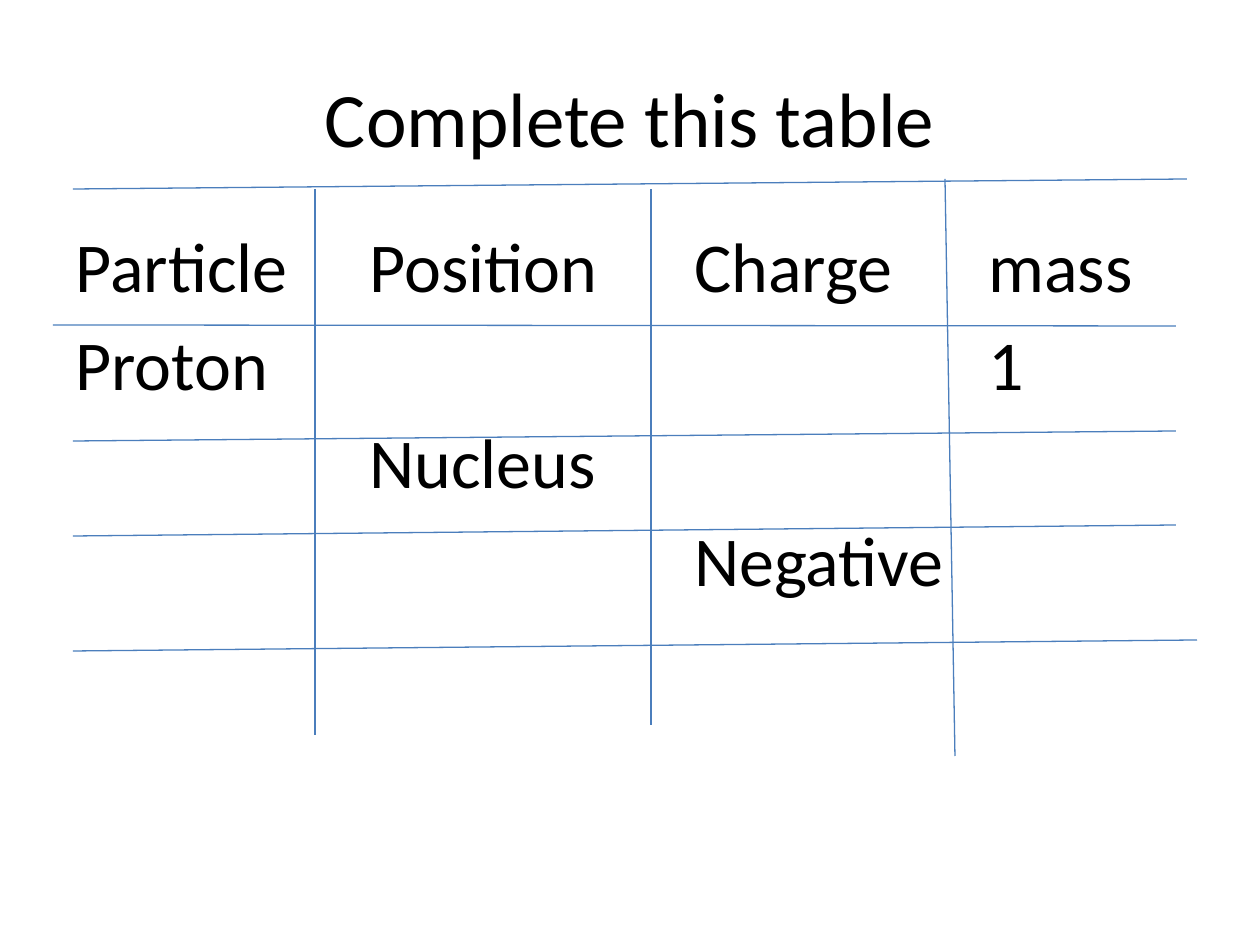
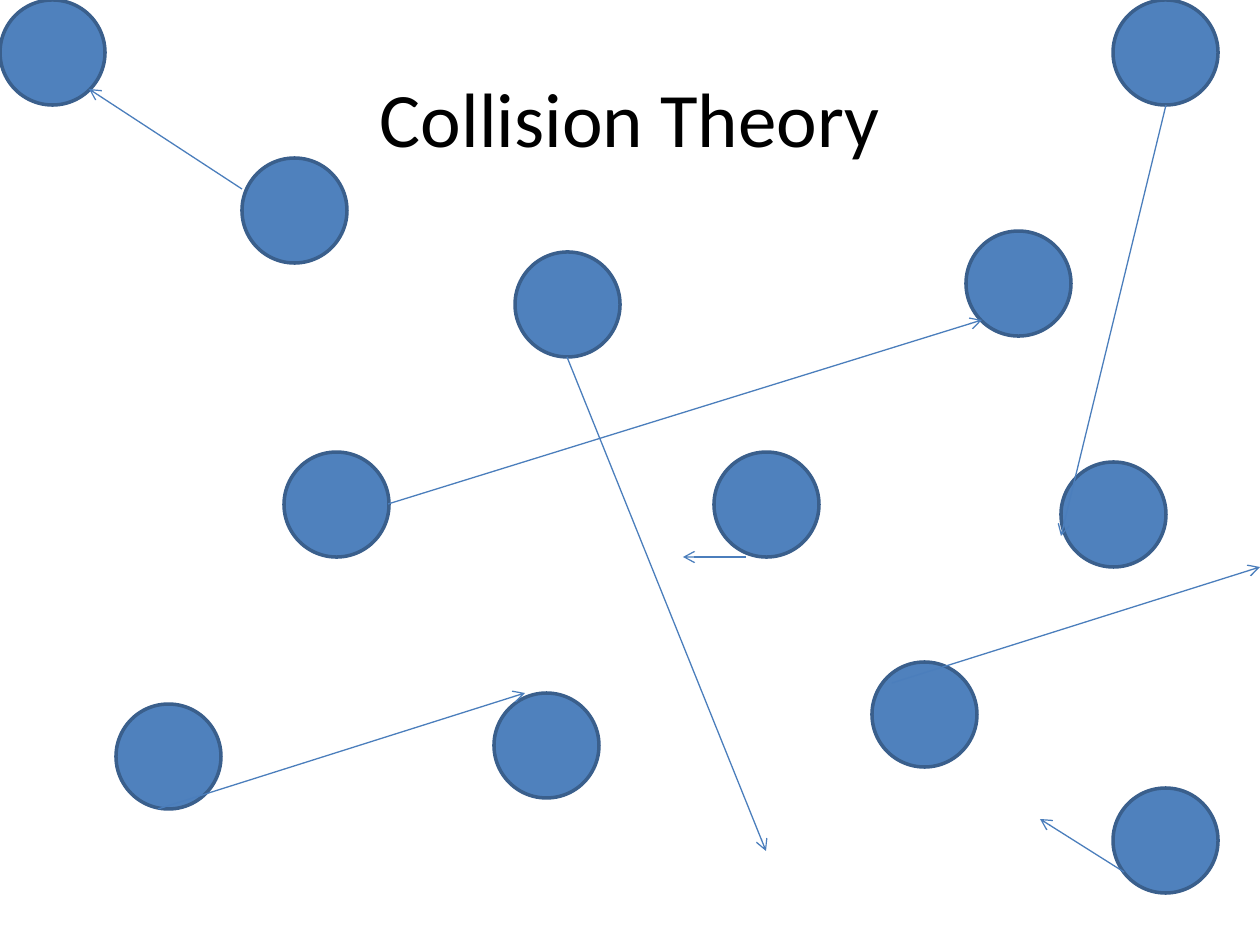
import pptx
import pptx.dml.color
import pptx.enum.shapes
import pptx.enum.text
import pptx.oxml
import pptx.oxml.ns
import pptx.util

PX = 914400 / 126
FONT = "Calibri"
COLOURS = {"text": "000000", "line": "4B7EBC", "particle": "4F81BD", "outline": "3A5F8C"}

SLIDE_BOX = (0, 0, 1260, 945)
TITLE_BOX = (63, 38, 1134, 158)
TABLE_BOX = (63, 220, 1133, 392)

COLUMN_WIDTHS = [294, 325, 294, 189, 31]
ROWS = [
    ["Particle", "Position", "Charge", "mass", ""],
    ["Proton", "", "", "1", ""],
    ["", "Nucleus", "", "", ""],
    ["", "", "Negative", "", ""],
]
TABLE_RULES = [
    (10, -31, 1124, -41),
    (-10, 105, 1113, 106),
    (10, 221, 1113, 211),
    (10, 316, 1113, 305),
    (10, 431, 1134, 420),
    (252, -31, 252, 515),
    (588, -31, 588, 505),
    (882, -41, 892, 536),
]

PARTICLE_SIZE = 105
PARTICLES = [
    (284, 452), (1113, 788), (1061, 462), (1113, 0), (242, 158), (0, 0),
    (714, 452), (494, 693), (116, 704), (515, 252), (872, 662), (966, 231),
]
MOTIONS = [
    (388, 504, 982, 320),
    (242, 189, 89, 89),
    (1166, 105, 1061, 536),
    (746, 557, 683, 557),
    (158, 809, 525, 693),
    (567, 357, 766, 851),
    (892, 683, 1260, 567),
    (1124, 872, 1040, 819),
]


def emu(*lengths):
    return [pptx.util.Emu(round(length * PX)) for length in lengths]


def colour(name):
    return pptx.dml.color.RGBColor.from_string(COLOURS[name])


def add_run(paragraph, text, size):
    run = paragraph.add_run()
    run.text = text
    run.font.name = FONT
    run.font.size = pptx.util.Pt(size)
    run.font.bold = False
    run.font.color.rgb = colour("text")


def add_title_slide(presentation, text):
    slide = presentation.slides.add_slide(presentation.slide_layouts[5])
    title = slide.shapes.title
    title.left, title.top, title.width, title.height = emu(*TITLE_BOX)
    title.text_frame.vertical_anchor = pptx.enum.text.MSO_ANCHOR.MIDDLE
    paragraph = title.text_frame.paragraphs[0]
    paragraph.alignment = pptx.enum.text.PP_ALIGN.CENTER
    add_run(paragraph, text, 44)
    return slide


def add_line(slide, box, ends, arrow=False):
    left, top = box[:2]
    x1, y1, x2, y2 = ends
    connector = slide.shapes.add_connector(
        pptx.enum.shapes.MSO_CONNECTOR.STRAIGHT,
        *emu(left + x1, top + y1, left + x2, top + y2))
    connector.line.color.rgb = colour("line")
    connector.line.width = pptx.util.Pt(0.75)
    properties = connector._element.spPr
    if arrow:
        line = properties.find(pptx.oxml.ns.qn("a:ln"))
        line.append(pptx.oxml.parse_xml(
            f'<a:tailEnd {pptx.oxml.ns.nsdecls("a")} type="arrow"/>'))
    properties.append(pptx.oxml.parse_xml(
        f'<a:effectLst {pptx.oxml.ns.nsdecls("a")}/>'))


def add_particle_table(slide, box):
    table = slide.shapes.add_table(len(ROWS), len(COLUMN_WIDTHS), *emu(*box)).table
    table.first_row = False
    table.horz_banding = False
    for column, width in zip(table.columns, COLUMN_WIDTHS):
        column.width = emu(width)[0]
    for row, texts in zip(table.rows, ROWS):
        row.height = emu(box[3] / len(ROWS))[0]
        for cell, text in zip(row.cells, texts):
            cell.fill.background()
            if text:
                add_run(cell.text_frame.paragraphs[0], text, 40)
    for ends in TABLE_RULES:
        add_line(slide, box, ends)


def add_particle(slide, box, x, y):
    shape = slide.shapes.add_shape(
        pptx.enum.shapes.MSO_SHAPE.OVAL,
        *emu(box[0] + x, box[1] + y, PARTICLE_SIZE, PARTICLE_SIZE))
    shape.shadow.inherit = False
    shape.fill.solid()
    shape.fill.fore_color.rgb = colour("particle")
    shape.line.color.rgb = colour("outline")
    shape.line.width = pptx.util.Pt(2)


def add_collisions(slide, box):
    for x, y in PARTICLES:
        add_particle(slide, box, x, y)
    for ends in MOTIONS:
        add_line(slide, box, ends, arrow=True)


def main():
    presentation = pptx.Presentation()
    presentation.slide_width, presentation.slide_height = emu(*SLIDE_BOX[2:])
    add_particle_table(add_title_slide(presentation, "Complete this table"), TABLE_BOX)
    add_collisions(add_title_slide(presentation, "Collision Theory"), SLIDE_BOX)
    presentation.save("out.pptx")


if __name__ == "__main__":
    main()
